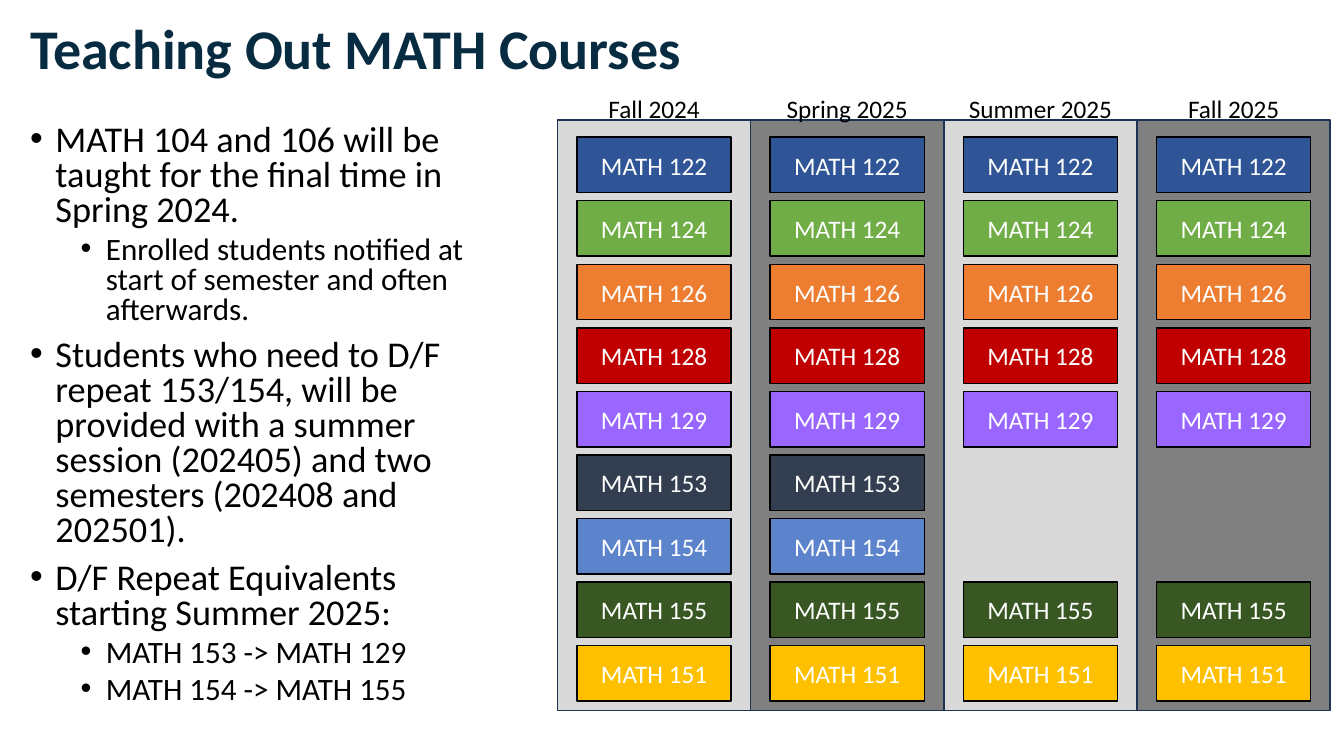
from dataclasses import dataclass

from lxml.etree import SubElement
from pptx import Presentation
from pptx.dml.color import RGBColor
from pptx.enum.shapes import MSO_SHAPE
from pptx.enum.text import MSO_ANCHOR, MSO_AUTO_SIZE, PP_ALIGN
from pptx.oxml.ns import qn
from pptx.util import Pt


@dataclass(frozen=True)
class Theme:
    """Colours, font and type sizes of the slide."""
    font: str = "Calibri"
    title: str = "072B41"
    text: str = "000000"
    card_text: str = "FFFFFF"
    card_line: str = "000000"
    term_line: str = "1E3256"
    term_fills: tuple = ("D9D9D9", "808080")
    title_size: float = 40
    bullet_sizes: tuple = (25.9, 22.2)
    label_size: float = 18


THEME = Theme()

COURSES = {
    "MATH 122": "2F5597",
    "MATH 124": "70AD47",
    "MATH 126": "ED7D31",
    "MATH 128": "C00000",
    "MATH 129": "9966FF",
    "MATH 153": "333F50",
    "MATH 154": "5C84CC",
    "MATH 155": "385723",
    "MATH 151": "FFC000",
}
RETIRED = {"MATH 153", "MATH 154"}
TERMS = [
    ("Fall 2024", set()),
    ("Spring 2025", set()),
    ("Summer 2025", RETIRED),
    ("Fall 2025", RETIRED),
]
BULLETS = [
    (0, "MATH 104 and 106 will be taught for the final time in Spring 2024."),
    (1, "Enrolled students notified at start of semester and often afterwards."),
    (0, "Students who need to D/F repeat 153/154, will be provided with a summer "
        "session (202405) and two semesters (202408 and 202501)."),
    (0, "D/F Repeat Equivalents starting Summer 2025:"),
    (1, "MATH 153 -> MATH 129"),
    (1, "MATH 154 -> MATH 155"),
]

TERM_LEFT, TERM_TOP, TERM_WIDTH, TERM_HEIGHT = 398.2, 85.7, 138, 422
HEADER_TOP, HEADER_HEIGHT = 63.2, 29
CARD_WIDTH, CARD_HEIGHT = 110.2, 39.6
CARD_TOP, CARD_PITCH = 98, 45.4


def place(part, left, top, width, height):
    """Move and size a placeholder."""
    part.left, part.top = Pt(left), Pt(top)
    part.width, part.height = Pt(width), Pt(height)


def add_run(paragraph, words, size, color, bold=False):
    """Append a formatted run to a paragraph."""
    run = paragraph.add_run()
    run.text = words
    run.font.name = THEME.font
    run.font.size = Pt(size)
    run.font.bold = bold
    run.font.color.rgb = RGBColor.from_string(color)


def add_box(slide, left, top, width, height, fill, line):
    """Add a flat outlined rectangle."""
    box = slide.shapes.add_shape(
        MSO_SHAPE.RECTANGLE, Pt(left), Pt(top), Pt(width), Pt(height))
    box.shadow.inherit = False
    box.fill.solid()
    box.fill.fore_color.rgb = RGBColor.from_string(fill)
    box.line.color.rgb = RGBColor.from_string(line)
    box.line.width = Pt(1)
    return box


def add_card(slide, course, left, top):
    """Add one course card."""
    card = add_box(slide, left, top, CARD_WIDTH, CARD_HEIGHT,
                   COURSES[course], THEME.card_line)
    card.text_frame.vertical_anchor = MSO_ANCHOR.MIDDLE
    label = card.text_frame.paragraphs[0]
    label.alignment = PP_ALIGN.CENTER
    add_run(label, course, THEME.label_size, THEME.card_text)


def add_header(slide, term, left):
    """Add a term name centred above its column."""
    header = slide.shapes.add_textbox(
        Pt(left), Pt(HEADER_TOP), Pt(TERM_WIDTH), Pt(HEADER_HEIGHT))
    header.text_frame.word_wrap = True
    label = header.text_frame.paragraphs[0]
    label.alignment = PP_ALIGN.CENTER
    add_run(label, term, THEME.label_size, THEME.text)


def add_term(slide, position, term, dropped):
    """Add a term column with the courses it offers."""
    left = TERM_LEFT + position * TERM_WIDTH
    add_box(slide, left, TERM_TOP, TERM_WIDTH, TERM_HEIGHT,
            THEME.term_fills[position % 2], THEME.term_line)
    add_header(slide, term, left)
    for row, course in enumerate(COURSES):
        if course not in dropped:
            add_card(slide, course, left + (TERM_WIDTH - CARD_WIDTH) / 2,
                     CARD_TOP + row * CARD_PITCH)


def fill_title(title, words):
    """Place and write the title."""
    place(title, 14.4, 9.4, 828, 54.7)
    title.text_frame.auto_size = MSO_AUTO_SIZE.NONE
    title.text_frame.vertical_anchor = MSO_ANCHOR.MIDDLE
    heading = title.text_frame.paragraphs[0]
    heading.alignment = PP_ALIGN.LEFT
    heading.line_spacing = 0.9
    add_run(heading, words, THEME.title_size, THEME.title, bold=True)


def format_bullet(paragraph, level):
    """Set level, indent, spacing and bullet sign."""
    paragraph.level = level
    paragraph.line_spacing = 0.8
    paragraph.space_before = Pt((10, 5)[level])
    properties = paragraph._p.get_or_add_pPr()
    properties.set("marL", str(Pt((18, 54)[level])))
    properties.set("indent", str(Pt(-18)))
    SubElement(properties, qn("a:buFont"), typeface="Arial")
    SubElement(properties, qn("a:buChar"), char="•")


def fill_body(body, bullets):
    """Place and write the bulleted list."""
    place(body, 14.4, 85.7, 358.6, 444.2)
    body.text_frame.auto_size = MSO_AUTO_SIZE.NONE
    for number, (level, words) in enumerate(bullets):
        bullet = (body.text_frame.add_paragraph() if number
                  else body.text_frame.paragraphs[0])
        format_bullet(bullet, level)
        add_run(bullet, words, THEME.bullet_sizes[level], THEME.text)


def main():
    """Build and save the slide."""
    deck = Presentation()
    deck.slide_width, deck.slide_height = Pt(960), Pt(540)
    slide = deck.slides.add_slide(deck.slide_layouts[1])
    fill_title(slide.shapes.title, "Teaching Out MATH Courses")
    fill_body(slide.placeholders[1], BULLETS)
    for position, (term, dropped) in enumerate(TERMS):
        add_term(slide, position, term, dropped)
    deck.save("out.pptx")


if __name__ == "__main__":
    main()
